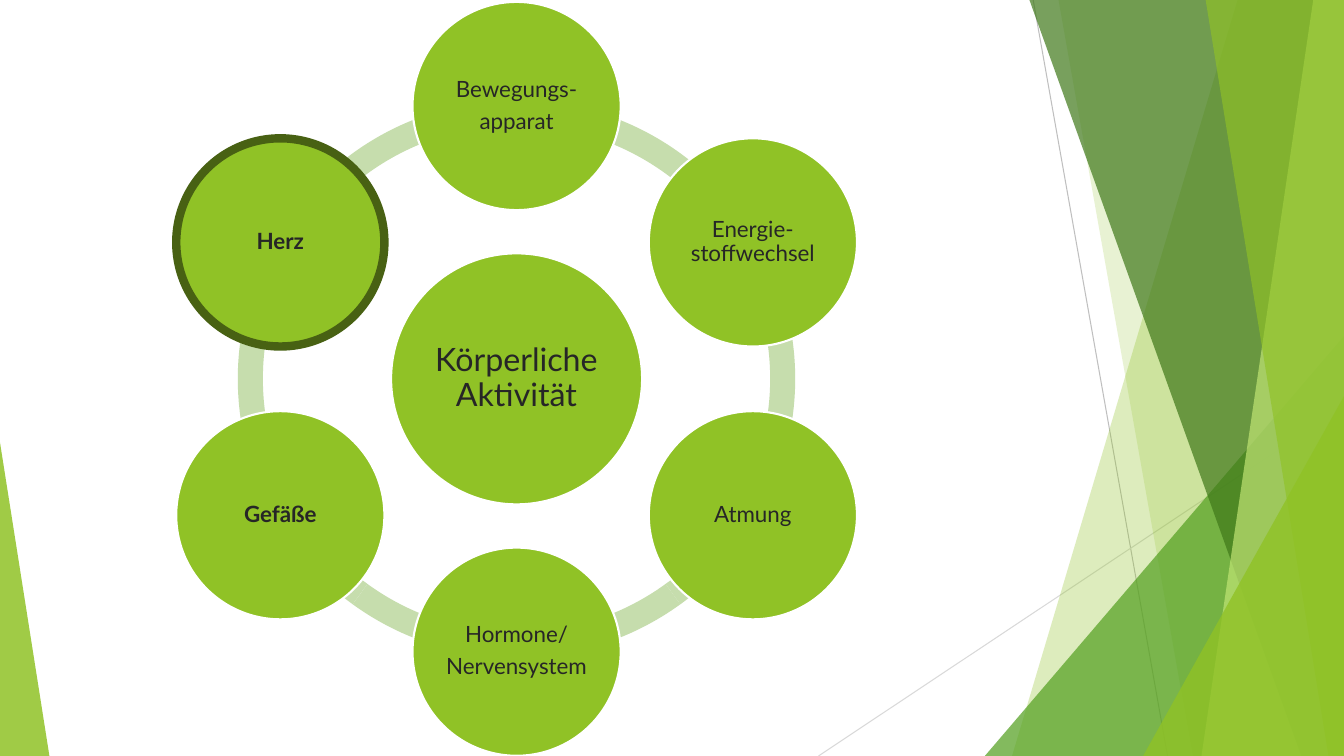
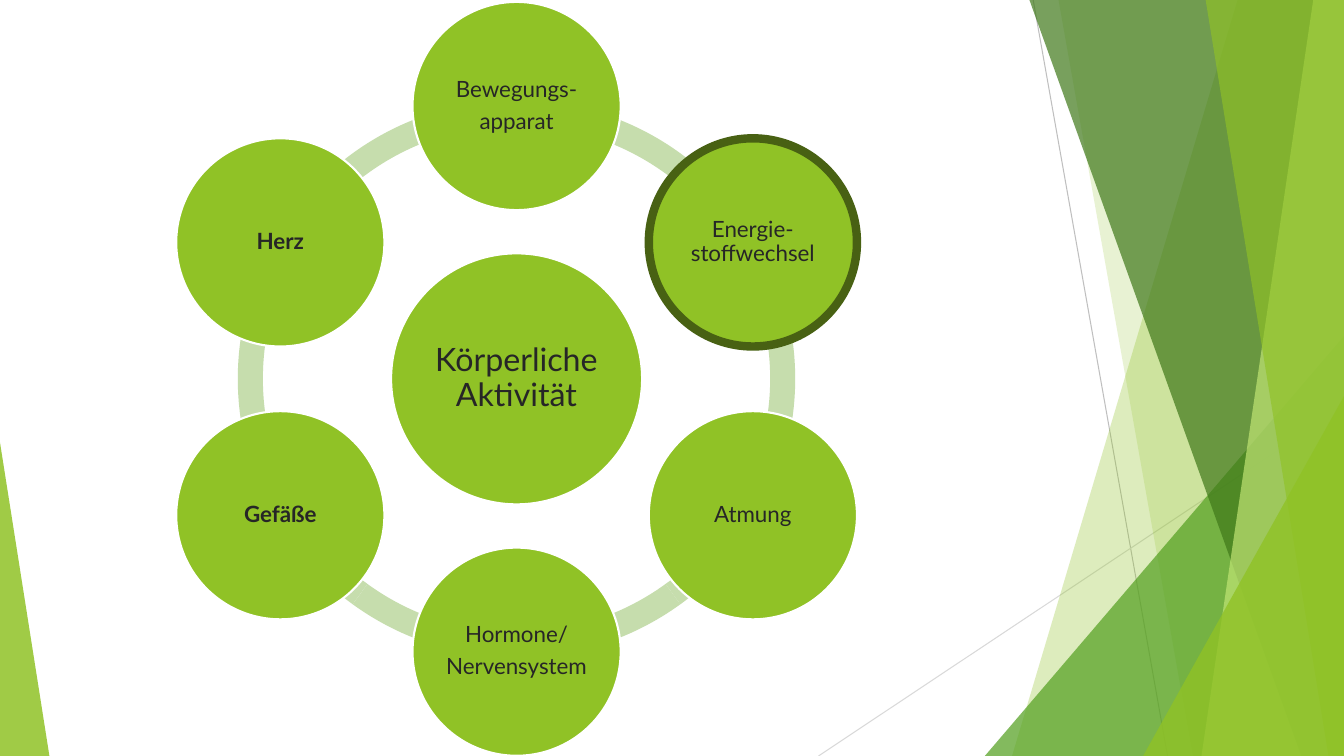
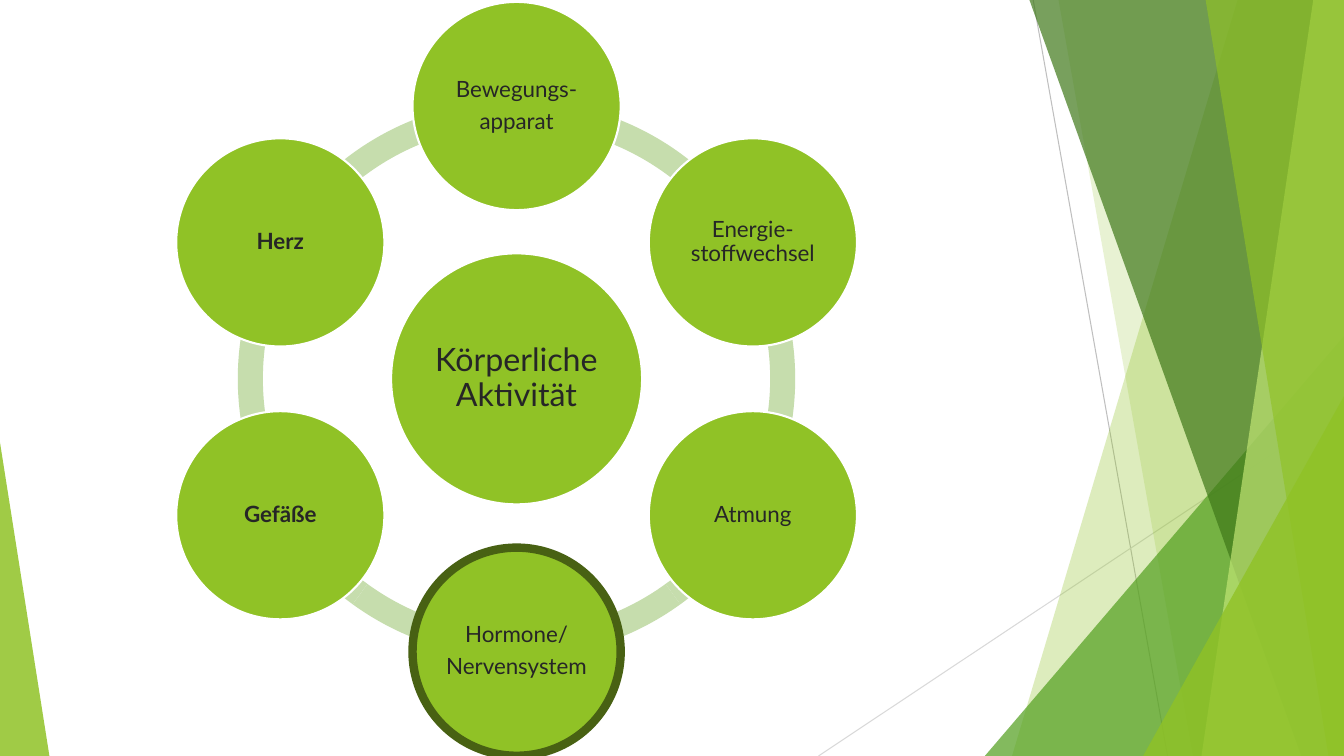
import math
from dataclasses import dataclass
from typing import Any

import pptx
import pptx.dml.color
import pptx.enum.shapes
import pptx.enum.text
import pptx.oxml
import pptx.oxml.ns
import pptx.util
from lxml import etree

# The slide is a grid of 160 columns by 90 rows of square cells
COLUMNS, ROWS = 160, 90
CELL = pptx.util.Inches(7.5) // ROWS
BLEED = -0.1  # top edge of the facets, just above the slide

PRESET = pptx.enum.shapes.MSO_SHAPE
Point = tuple[float, float]


@dataclass(frozen=True)
class Theme:
    lime: str = "90C226"
    green: str = "54A021"
    forest: str = "3F7819"
    pale_lime: str = "C0E474"
    olive: str = "486113"
    ring: str = "C6DDAD"
    ink: str = "262626"
    white: str = "FFFFFF"
    grey: str = "BFBFBF"
    light_grey: str = "D9D9D9"
    font: str = "Lato"
    core_size: float = 23
    satellite_size: float = 16
    hairline: float = 0.75
    outline: float = 1.5
    highlight: float = 6


THEME = Theme()


@dataclass(frozen=True)
class Ray:
    start: Point
    end: Point
    color: str


@dataclass(frozen=True)
class Facet:
    """Band running from the top to the bottom edge, flush with the right edge."""
    top_left: float
    bottom_left: float
    color: str
    opacity: int


@dataclass(frozen=True)
class Wedge:
    """Right triangle standing on the bottom edge; apex 0 is left, 1 is right."""
    left: float
    top: float
    width: float
    apex: int
    color: str
    opacity: int


@dataclass(frozen=True)
class Disc:
    """Circle with a label: \\n starts a paragraph, \\v a line."""
    label: str
    bold: bool = False
    diameter: float = 24.78
    size: float = THEME.satellite_size
    inset: float = 0.02


# Backdrop, from back to front
BACKDROP = (
    Ray((123, 0), (139, ROWS), THEME.grey),
    Ray((COLUMNS, 48.36), (97.44, ROWS), THEME.light_grey),
    Facet(147.36, 120.48, THEME.lime, 30),
    Facet(126, 142, THEME.lime, 20),
    Wedge(117.24, 40, 42.76, 1, THEME.green, 72),
    Facet(122.52, 154.92, THEME.forest, 70),
    Facet(156.36, 143.04, THEME.pale_lime, 70),
    Facet(143.52, 158.16, THEME.lime, 65),
    Wedge(136.08, 47.16, 23.92, 1, THEME.lime, 80),
    Wedge(0, 52.68, 5.88, 0, THEME.lime, 85),
)

# Wheel: a core and six satellites, clockwise from the top
CENTER: Point = (61.5, 45.1)
ORBIT = 32.48
RING_DIAMETER = 66.36
RING_THICKNESS = 0.045
ARC_STOPS = [18 + 36 * step for step in range(6)]

ACTIVITY = Disc("Körperliche Aktivität", diameter=29.88, size=THEME.core_size, inset=0.03)
MOVEMENT = Disc("Bewegungs-\napparat")
METABOLISM = Disc("Energie-\vstoffwechsel")
BREATHING = Disc("Atmung")
HORMONES = Disc("Hormone/\nNervensystem")
VESSELS = Disc("Gefäße", bold=True)
HEART = Disc("Herz", bold=True)
SATELLITES = (MOVEMENT, METABOLISM, BREATHING, HORMONES, VESSELS, HEART)

HIGHLIGHTS = (HEART, METABOLISM, HORMONES)  # one slide each


# Helpers
def cells(count: float) -> int:
    return round(count * CELL)


def rgb(color: str) -> pptx.dml.color.RGBColor:
    return pptx.dml.color.RGBColor.from_string(color)


def apply(target: Any, formats: dict[str, Any]) -> None:
    for name, value in formats.items():
        setattr(target, name, value)


def paint(shape: Any, color: str, opacity: int = 100) -> None:
    """Flat fill without outline or shadow."""
    shape.shadow.inherit = False
    shape.fill.solid()
    shape.fill.fore_color.rgb = rgb(color)
    shape.line.fill.background()
    if opacity < 100:
        tint = shape.element.find(".//" + pptx.oxml.ns.qn("a:srgbClr"))
        etree.SubElement(tint, pptx.oxml.ns.qn("a:alpha"), val=str(opacity * 1000))


def add_round(slide: Any, preset: Any, center: Point, diameter: float) -> Any:
    left, top = (cells(middle - diameter / 2) for middle in center)
    return slide.shapes.add_shape(preset, left, top, cells(diameter), cells(diameter))


# Backdrop parts
def draw_ray(slide: Any, ray: Ray) -> Any:
    ends = [cells(value) for value in (*ray.start, *ray.end)]
    line = slide.shapes.add_connector(pptx.enum.shapes.MSO_CONNECTOR.STRAIGHT, *ends)
    line.line.color.rgb = rgb(ray.color)
    line.line.width = pptx.util.Pt(THEME.hairline)
    etree.SubElement(line.element.spPr, pptx.oxml.ns.qn("a:effectLst"))
    return line


def draw_facet(slide: Any, facet: Facet) -> Any:
    corners = [(facet.top_left, BLEED), (COLUMNS, BLEED),
               (COLUMNS, ROWS), (facet.bottom_left, ROWS)]
    start, *others = [(cells(x), cells(y)) for x, y in corners]
    outline = slide.shapes.build_freeform(*start)
    outline.add_line_segments(others, close=True)
    band = outline.convert_to_shape()
    paint(band, facet.color, facet.opacity)
    return band


def draw_wedge(slide: Any, wedge: Wedge) -> Any:
    frame = (wedge.left, wedge.top, wedge.width, ROWS - wedge.top)
    triangle = slide.shapes.add_shape(PRESET.ISOSCELES_TRIANGLE, *map(cells, frame))
    triangle.adjustments[0] = wedge.apex
    paint(triangle, wedge.color, wedge.opacity)
    return triangle


def draw_backdrop(slide: Any, layout: Any) -> None:
    """Draw the backdrop once and move it to the layout all slides share."""
    for placeholder in list(layout.placeholders):
        layout.shapes.element.remove(placeholder.element)
    painters = {Ray: draw_ray, Facet: draw_facet, Wedge: draw_wedge}
    for part in BACKDROP:
        layout.shapes.element.append(painters[type(part)](slide, part).element)


# Wheel parts
def draw_ring(slide: Any) -> None:
    for start, end in zip(ARC_STOPS, ARC_STOPS[1:] + ARC_STOPS[:1]):
        arc = add_round(slide, PRESET.BLOCK_ARC, CENTER, RING_DIAMETER)
        # Angles count in 60000ths of a degree, adjustments in 100000ths
        for index, value in enumerate((start * 0.6, end * 0.6, RING_THICKNESS)):
            arc.adjustments[index] = value
        paint(arc, THEME.ring)


def draw_disc(slide: Any, disc: Disc, center: Point, highlighted: bool = False) -> None:
    circle = add_round(slide, PRESET.OVAL, center, disc.diameter)
    paint(circle, THEME.lime)
    circle.line.color.rgb = rgb(THEME.olive if highlighted else THEME.white)
    circle.line.width = pptx.util.Pt(THEME.highlight if highlighted else THEME.outline)

    frame = circle.text_frame
    sides = ("left", "top", "right", "bottom")
    apply(frame, {f"margin_{side}": pptx.util.Inches(disc.inset) for side in sides})
    apply(frame, {"word_wrap": True, "text": disc.label,
                  "vertical_anchor": pptx.enum.text.MSO_ANCHOR.MIDDLE})
    for paragraph in frame.paragraphs:
        apply(paragraph, {"alignment": pptx.enum.text.PP_ALIGN.CENTER,
                          "line_spacing": 0.9,
                          "space_after": pptx.util.Pt(0.35 * disc.size)})
        for run in paragraph.runs:
            apply(run.font, {"name": THEME.font, "bold": disc.bold,
                             "size": pptx.util.Pt(disc.size)})
            run.font.color.rgb = rgb(THEME.ink)


def draw_wheel(slide: Any, highlight: Disc) -> None:
    draw_ring(slide)
    draw_disc(slide, ACTIVITY, CENTER)
    for index, satellite in enumerate(SATELLITES):
        angle = math.tau * index / len(SATELLITES)
        center = (CENTER[0] + ORBIT * math.sin(angle), CENTER[1] - ORBIT * math.cos(angle))
        draw_disc(slide, satellite, center, satellite is highlight)


def main() -> None:
    deck = pptx.Presentation()
    apply(deck, {"slide_width": cells(COLUMNS), "slide_height": cells(ROWS)})
    blank = deck.slide_layouts[6]
    slides = [deck.slides.add_slide(blank) for _ in HIGHLIGHTS]
    draw_backdrop(slides[0], blank)
    for slide, highlight in zip(slides, HIGHLIGHTS):
        draw_wheel(slide, highlight)
    deck.save("out.pptx")


if __name__ == "__main__":
    main()
